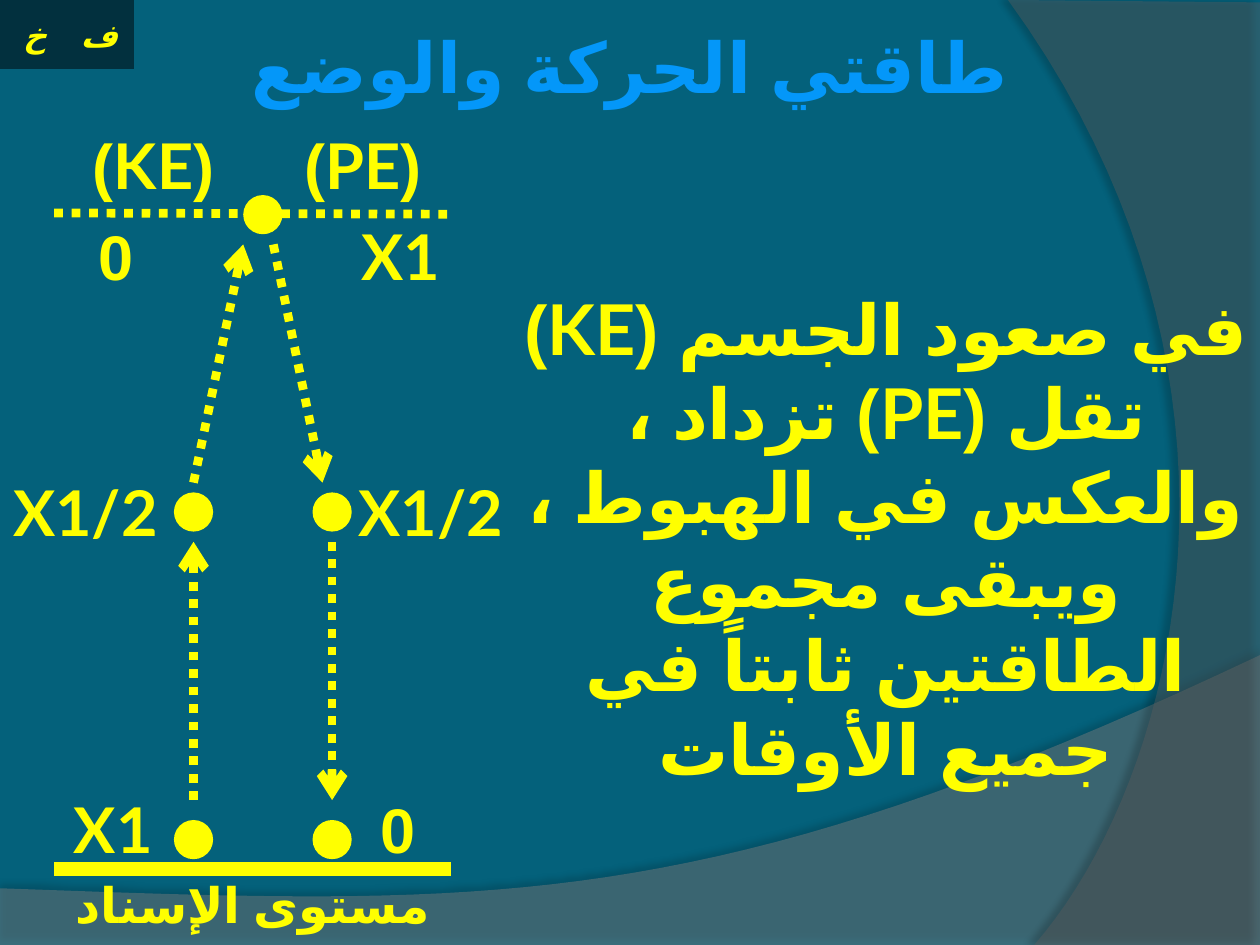
from lxml import etree
from pptx import Presentation
from pptx.dml.color import RGBColor
from pptx.enum.dml import MSO_LINE
from pptx.enum.lang import MSO_LANGUAGE_ID
from pptx.enum.shapes import MSO_CONNECTOR, MSO_SHAPE
from pptx.enum.text import MSO_ANCHOR, MSO_AUTO_SIZE, PP_ALIGN
from pptx.oxml.ns import qn
from pptx.util import Pt

CENTER = PP_ALIGN.CENTER
TOP, MIDDLE = MSO_ANCHOR.TOP, MSO_ANCHOR.MIDDLE
OVAL, BUTTON = MSO_SHAPE.OVAL, MSO_SHAPE.ACTION_BUTTON_CUSTOM
STRAIGHT, DOTTED = MSO_CONNECTOR.STRAIGHT, MSO_LINE.ROUND_DOT
FIT_SHAPE = MSO_AUTO_SIZE.SHAPE_TO_FIT_TEXT
ARABIC = MSO_LANGUAGE_ID.ARABIC
YELLOW = "FFFF00"
WIDTH, HEIGHT = 720, 540
BALL = 22.4
LEFT_X, APEX_X, RIGHT_X = 110.6, 150.2, 189.8
TOP_Y, MIDDLE_Y, GROUND_Y = 122.7, 292.6, 479.8


def rgb(value):
    return RGBColor.from_string(value)


def add_xml(parent, tag, **attributes):
    return etree.SubElement(parent, qn(tag), attributes)


def apply(target, values):
    for name, value in values.items():
        setattr(target, name, value)


def paint(shape, color):
    shape.shadow.inherit = False
    shape.fill.solid()
    shape.fill.fore_color.rgb = rgb(color)
    shape.line.fill.background()


def write(shape, text, size, color=YELLOW, font="Lato", italic=False,
          anchor=MIDDLE, wrap=True, inset=None):
    """Put one centred right-to-left paragraph into a shape."""
    frame = shape.text_frame
    apply(frame, {"word_wrap": wrap, "vertical_anchor": anchor})
    if inset is not None:
        sides = ("left", "top", "right", "bottom")
        apply(frame, {f"margin_{side}": Pt(inset) for side in sides})
    para = frame.paragraphs[0]
    para.alignment = CENTER
    para._p.get_or_add_pPr().set("rtl", "1")
    span = para.add_run()
    span.text = text
    apply(span.font, {"size": Pt(size), "bold": True, "italic": italic,
                      "name": font, "language_id": ARABIC})
    span.font.color.rgb = rgb(color)
    add_xml(span._r.rPr, "a:cs", typeface="Arial")
    return span


def add_label(page, text, left, top, width=92, height=46.8, size=36):
    box = page.shapes.add_textbox(Pt(left), Pt(top), Pt(width), Pt(height))
    write(box, text, size, inset=3.6)


def add_button(page, text, left):
    button = page.shapes.add_shape(BUTTON, Pt(left), 0, Pt(39.6), Pt(39.6))
    paint(button, "02303E")
    write(button, text, 18, font="Arial", italic=True, wrap=False)


def add_ball(page, x, y):
    ball = page.shapes.add_shape(OVAL, Pt(x - BALL / 2), Pt(y - BALL / 2), Pt(BALL), Pt(BALL))
    paint(ball, YELLOW)


def add_line(page, start, end, width=5, dotted=True, arrow=False):
    line = page.shapes.add_connector(STRAIGHT, *(Pt(v) for v in (*start, *end)))
    line.line.color.rgb = rgb(YELLOW)
    line.line.width = Pt(width)
    if dotted:
        line.line.dash_style = DOTTED
    if arrow:
        add_xml(line.line._get_or_add_ln(), "a:tailEnd", type="arrow")
    add_xml(line._element.spPr, "a:effectLst")


def curve(start, control1, control2, end, steps=40):
    """Points along a cubic Bezier curve."""
    points = []
    for step in range(steps + 1):
        t = step / steps
        weights = ((1 - t) ** 3, 3 * t * (1 - t) ** 2, 3 * t * t * (1 - t), t ** 3)
        corners = (start, control1, control2, end)
        points.append(tuple(sum(w * c[axis] for w, c in zip(weights, corners))
                            for axis in (0, 1)))
    return points


def add_wave(page, points, color, alpha, shadow_alpha, distance, direction):
    """Translucent backdrop outline with a soft shadow."""
    corners = [(Pt(x), Pt(y)) for x, y in points]
    builder = page.shapes.build_freeform(*corners[0])
    builder.add_line_segments(corners[1:], close=True)
    wave = builder.convert_to_shape()
    paint(wave, color)
    properties = wave._element.spPr
    fill_color = properties.find(qn("a:solidFill"))[0]
    add_xml(fill_color, "a:alpha", val=str(alpha * 1000))
    shadow = add_xml(properties.find(qn("a:effectLst")), "a:outerShdw",
                     blurRad=str(Pt(4)), dist=str(Pt(distance)),
                     dir=str(direction * 60000), algn="ctr", rotWithShape="0")
    shade = add_xml(shadow, "a:srgbClr", val="000000")
    add_xml(shade, "a:alpha", val=str(shadow_alpha * 1000))


def add_title(page, text):
    title = page.shapes.title
    page.shapes._spTree.append(title._element)  # in front of the backdrop
    apply(title, {"left": 0, "top": Pt(10), "width": Pt(WIDTH), "height": Pt(55.4)})
    span = write(title, text, 40, anchor=TOP)
    title.text_frame.auto_size = FIT_SHAPE
    # Three-stop vertical gradient on the letters
    properties = span._r.rPr
    properties.remove(properties.find(qn("a:solidFill")))
    gradient = etree.Element(qn("a:gradFill"))
    properties.insert(0, gradient)
    stops = add_xml(gradient, "a:gsLst")
    for place, color in ((0, "7DC4FF"), (75, "0497F9"), (100, "0074A1")):
        add_xml(add_xml(stops, "a:gs", pos=str(place * 1000)), "a:srgbClr", val=color)
    add_xml(gradient, "a:lin", ang="5400000", scaled="0")


def main():
    deck = Presentation()
    apply(deck, {"slide_width": Pt(WIDTH), "slide_height": Pt(HEIGHT)})
    page = deck.slides.add_slide(deck.slide_layouts[5])
    page.background.fill.solid()
    page.background.fill.fore_color.rgb = rgb("04617B")

    # Backdrop waves
    bottom_edge = curve((WIDTH, 374.4), (402.5, 524.9), (281.5, 517.7), (0, 507.6))
    add_wave(page, [(0, HEIGHT), (WIDTH, HEIGHT)] + bottom_edge, "7F7F7F", 45, 35, 3.5, 270)
    side_edge = curve((591, HEIGHT), (673.2, 445.7), (733, 216), (576, 0))
    add_wave(page, [(WIDTH, 1.4), (WIDTH, HEIGHT)] + side_edge, "5E5E5E", 40, 45, 4, 180)

    # Header: buttons and title
    add_button(page, "ف", 36.7)
    add_button(page, "خ", 0)
    add_title(page, "طاقتي الحركة والوضع")

    # Explanation
    add_label(page, "في صعود الجسم (KE) تقل (PE) تزداد ، والعكس في الهبوط ، "
              "ويبقى مجموع الطاقتين ثابتاً في جميع الأوقات", 292.3, 100, 427.7, 414, 40)

    # Ball positions
    for x in (LEFT_X, RIGHT_X):
        for y in (GROUND_Y, MIDDLE_Y):
            add_ball(page, x, y)
    add_ball(page, APEX_X, TOP_Y)

    # Path up on the left and down on the right
    for start, end in (
        ((LEFT_X, 457.2), (LEFT_X, 309.6)),
        ((LEFT_X, 275.8), (139, 139.7)),
        ((156.2, 139.7), (184.3, 275.8)),
        ((RIGHT_X, 309.6), (RIGHT_X, 457.2)),
    ):
        add_line(page, start, end, arrow=True)

    # Reference levels
    add_line(page, (31, 496.8), (257.8, 496.8), width=8, dotted=False)
    add_line(page, (31, 121.7), (257.8, 122.4))
    add_label(page, "مستوى الإسناد", 36.7, 493.2, 215.3, 46.8, 28)

    # Energy values: kinetic on the left, potential on the right
    for text, left in (("(KE)", 36.7), ("(PE)", 156.2)):
        add_label(page, text, left, 71.3, 102.2, 44.6)
    for top, left_text, left, right_text, right in (
        (122.4, "0", 20.2, "X1", 182.9),
        (268.6, "X1/2", 2.9, "X1/2", 200.2),
        (450, "X1", 18.7, "0", 181.4),
    ):
        add_label(page, left_text, left, top)
        add_label(page, right_text, right, top)

    deck.save("out.pptx")


if __name__ == "__main__":
    main()
